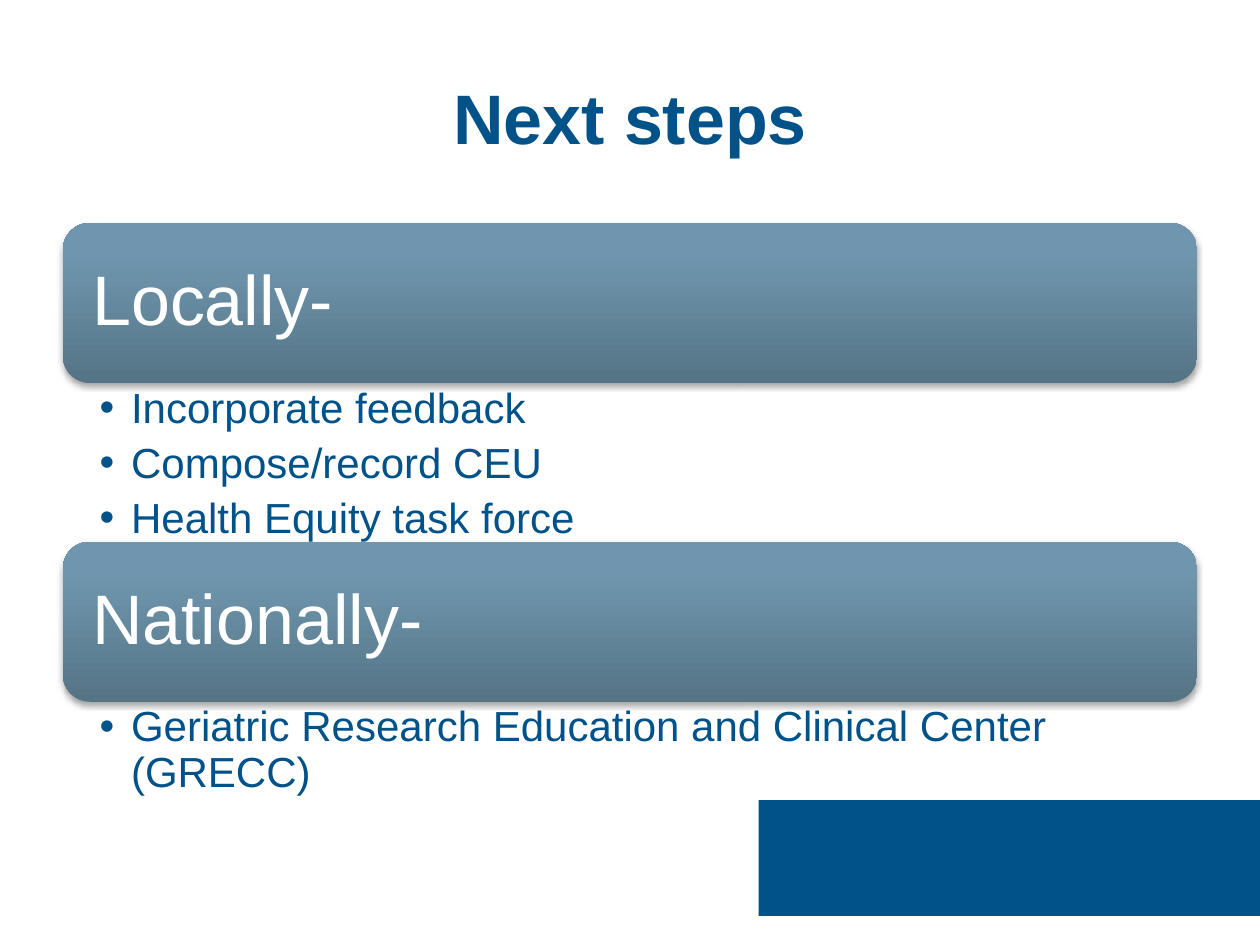
"""Build the "Next steps" slide: two headed bullet lists above a corner band."""
from dataclasses import dataclass

from lxml.etree import SubElement
from pptx import Presentation
from pptx.dml.color import RGBColor
from pptx.enum.shapes import MSO_SHAPE
from pptx.enum.text import MSO_ANCHOR, MSO_AUTO_SIZE, PP_ALIGN
from pptx.oxml import parse_xml
from pptx.oxml.ns import nsdecls, qn
from pptx.util import Inches, Pt


@dataclass(frozen=True)
class Theme:
    font: str = "Arial"
    blue: str = "005288"
    white: str = "FFFFFF"
    gradient: tuple = ((0, "557486"), (80, "6F96AE"), (100, "6E97B0"))
    heading: int = 40
    body: int = 24


theme = Theme()


def place(shape, left, top, width, height):
    shape.left, shape.top = Inches(left), Inches(top)
    shape.width, shape.height = Inches(width), Inches(height)


def style_text(text_frame, size, color, anchor, insets, bold=False):
    text_frame.word_wrap = True
    text_frame.auto_size = MSO_AUTO_SIZE.NONE
    text_frame.vertical_anchor = anchor
    left, top, right, bottom = map(Inches, insets)
    text_frame.margin_left, text_frame.margin_top = left, top
    text_frame.margin_right, text_frame.margin_bottom = right, bottom
    for paragraph in text_frame.paragraphs:
        paragraph.space_before = Pt(0)
        for run in paragraph.runs:
            run.font.name = theme.font
            run.font.size = Pt(size)
            run.font.bold = bold
            run.font.color.rgb = RGBColor.from_string(color)


MARGIN, CONTENT_WIDTH = 0.5, 9
FIRST_TOP, SECTION_PITCH, BAR_HEIGHT = 1.77, 2.53, 1.27
SECTIONS = (
    ("Locally-", 1.26, ("Incorporate feedback", "Compose/record CEU", "Health Equity task force")),
    ("Nationally-", 1.12, ("Geriatric Research Education and Clinical Center (GRECC)",)),
)

presentation = Presentation()
presentation.slide_width, presentation.slide_height = Inches(10), Inches(7.5)
slide = presentation.slides.add_slide(presentation.slide_layouts.get_by_name("Two Content"))
title, *lists = slide.placeholders

band = slide.shapes.add_shape(MSO_SHAPE.RECTANGLE, 0, 0, 0, 0)
place(band, 6.02, 6.35, 3.98, 0.92)
band.shadow.inherit = False
band.fill.solid()
band.fill.fore_color.rgb = RGBColor.from_string(theme.blue)
band.line.fill.background()
title._element.addprevious(band._element)

place(title, MARGIN, 0.3, CONTENT_WIDTH, 1.25)
title.text_frame.text = "Next steps"
title.text_frame.paragraphs[0].alignment = PP_ALIGN.CENTER
style_text(title.text_frame, theme.heading, theme.blue, MSO_ANCHOR.MIDDLE, (0.1, 0.05, 0.1, 0.05), bold=True)

stops = "".join(
    f'<a:gs pos="{position * 1000}"><a:srgbClr val="{color}"/></a:gs>'
    for position, color in theme.gradient
)

for index, (heading, list_height, items) in enumerate(SECTIONS):
    top = FIRST_TOP + index * SECTION_PITCH
    bar = slide.shapes.add_shape(MSO_SHAPE.ROUNDED_RECTANGLE, 0, 0, 0, 0)
    place(bar, MARGIN, top, CONTENT_WIDTH, BAR_HEIGHT)
    bar.line.fill.background()
    bar.shadow.inherit = False
    properties = bar._element.spPr
    properties.find(qn("a:prstGeom")).addnext(parse_xml(
        f'<a:gradFill {nsdecls("a")} rotWithShape="1"><a:gsLst>{stops}</a:gsLst>'
        '<a:lin ang="16200000" scaled="0"/></a:gradFill>'
    ))
    properties.find(qn("a:effectLst")).append(parse_xml(
        f'<a:outerShdw {nsdecls("a")} blurRad="{Pt(3.1)}" dist="{Pt(1.8)}" dir="5400000" rotWithShape="0">'
        '<a:srgbClr val="000000"><a:alpha val="35000"/></a:srgbClr></a:outerShdw>'
    ))
    bar.text_frame.text = heading
    bar.text_frame.paragraphs[0].alignment = PP_ALIGN.LEFT
    bar.text_frame.paragraphs[0].line_spacing = 0.9
    style_text(bar.text_frame, theme.heading, theme.white, MSO_ANCHOR.MIDDLE, (0.17, 0.17, 0.17, 0.17))

    bullets = lists[index]
    place(bullets, MARGIN, top + BAR_HEIGHT, CONTENT_WIDTH, list_height)
    bullets.text_frame.text = "\n".join(items)
    for paragraph in bullets.text_frame.paragraphs:
        paragraph_properties = paragraph._p.get_or_add_pPr()
        paragraph_properties.set("marL", str(Inches(0.25)))
        paragraph_properties.set("indent", str(-Inches(0.25)))
        SubElement(paragraph_properties, qn("a:buChar"), char="•")
        paragraph.line_spacing = 0.9
        paragraph.space_after = Pt(5.6)
    style_text(bullets.text_frame, theme.body, theme.blue, MSO_ANCHOR.TOP, (0.29, 0.03, 0.19, 0.03))

presentation.save("out.pptx")
